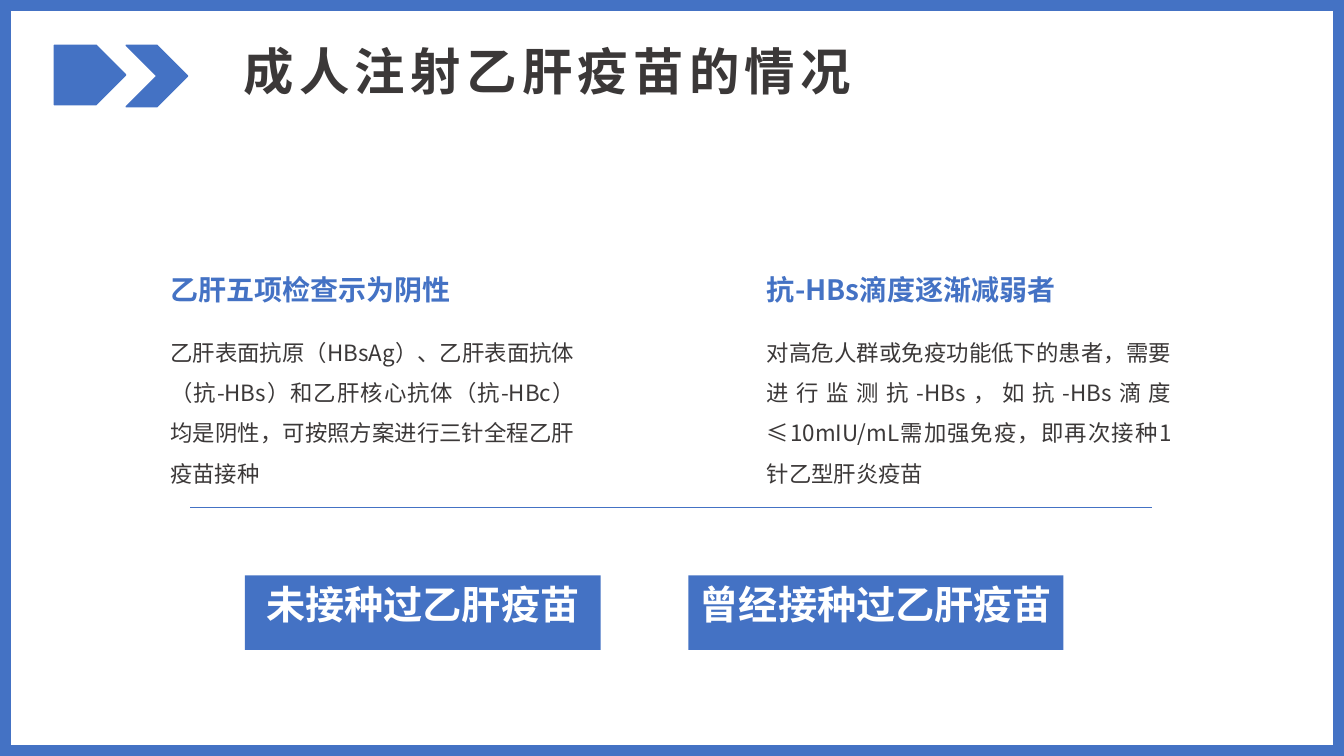
"""Build the slide on adult hepatitis B vaccination."""
from lxml.etree import SubElement
from pptx import Presentation
from pptx.dml.color import RGBColor
from pptx.enum.shapes import MSO_CONNECTOR, MSO_SHAPE as Form
from pptx.enum.text import MSO_ANCHOR as Anchor, PP_ALIGN as Align
from pptx.oxml.ns import qn
from pptx.util import Cm, Pt

TITLE = "成人注射乙肝疫苗的情况"
CASES = [
    {
        "head": "乙肝五项检查示为阴性",
        "body": "乙肝表面抗原（HBsAg）、乙肝表面抗体（抗-HBs）和乙肝核心抗体（抗-HBc）"
                "均是阴性，可按照方案进行三针全程乙肝疫苗接种",
        "label": "未接种过乙肝疫苗",
        "left": 3.63, "wide": 8.61, "tag": (6.17, 8.97),
    },
    {
        "head": "抗-HBs滴度逐渐减弱者",
        "body": "对高危人群或免疫功能低下的患者，需要进行监测抗-HBs，如抗-HBs滴度"
                "≤10mIU/mL需加强免疫，即再次接种1 针乙型肝炎疫苗",
        "label": "曾经接种过乙肝疫苗",
        "left": 18.67, "wide": 10.39, "tag": (17.35, 9.45),
    },
]

FONT = "Noto Sans CJK SC"
BLUE = RGBColor(0x44, 0x72, 0xC4)
DARK = RGBColor(0x3B, 0x38, 0x38)
WHITE = RGBColor(0xFF, 0xFF, 0xFF)
WIDE, HIGH, EDGE = 33.87, 19.05, 0.28
PAD = (0.66, 0.33)

deck = Presentation()
deck.slide_width, deck.slide_height = Cm(WIDE), Cm(HIGH)
slide = deck.slides.add_slide(deck.slide_layouts[6])
shapes = slide.shapes


def draw(form, box, fill=BLUE, line=None):
    shape = shapes.add_shape(form, *map(Cm, box))
    shape.shadow.inherit = False
    shape.fill.solid()
    shape.fill.fore_color.rgb = fill
    if line:
        shape.line.color.rgb = BLUE
        shape.line.width = Pt(line)
    else:
        shape.line.fill.background()
    return shape


def write(text, box=None, shape=None, size=16, color=DARK, bold=False,
          align=Align.LEFT, anchor=Anchor.TOP, pad=(0.25, 0.13),
          lead=None, space=None):
    shape = shape or shapes.add_textbox(*map(Cm, box))
    frame = shape.text_frame
    frame.word_wrap = True
    frame.vertical_anchor = anchor
    frame.margin_left = frame.margin_right = Cm(pad[0])
    frame.margin_top = frame.margin_bottom = Cm(pad[1])
    para = frame.paragraphs[0]
    para.alignment = align
    if lead:
        para.line_spacing = lead
    run = para.add_run()
    run.text = text
    font = run.font
    font.name, font.size, font.bold = FONT, Pt(size), bold
    font.color.rgb = color
    props = run._r.get_or_add_rPr()
    if space:
        props.set("spc", str(round(space * 100)))
    SubElement(props, qn("a:ea")).set("typeface", FONT)


draw(Form.RECTANGLE, (0, 0, WIDE, HIGH))
draw(Form.RECTANGLE, (EDGE, EDGE, WIDE - 2 * EDGE, HIGH - 2 * EDGE), WHITE)
draw(Form.CHEVRON, (3.18, 1.14, 1.55, 1.55), line=1)
draw(Form.PENTAGON, (1.37, 1.14, 1.8, 1.5), line=1)
write(TITLE, (5.89, 0.89, 16.56, 1.78), size=36, bold=True, space=3.8)

for case in CASES:
    left = case["left"]
    write(case["head"], (left, 6.71, case["wide"], 1.14), size=20,
          color=BLUE, bold=True, anchor=Anchor.MIDDLE, pad=PAD)
    write(case["body"], (left, 7.87, 11.51, 2.62), align=Align.JUSTIFY,
          pad=PAD, lead=1.5)
    start, wide = case["tag"]
    tag = draw(Form.RECTANGLE, (start, 14.5, wide, 1.88))
    write(case["label"], shape=tag, size=28, color=WHITE, bold=True,
          align=Align.CENTER)

rule = shapes.add_connector(MSO_CONNECTOR.STRAIGHT,
                            *map(Cm, (4.8, 12.78, 29.03, 12.78)))
rule.line.color.rgb = BLUE
rule.line.width = Pt(0.5)
SubElement(rule._element.spPr, qn("a:effectLst"))

deck.save("out.pptx")
